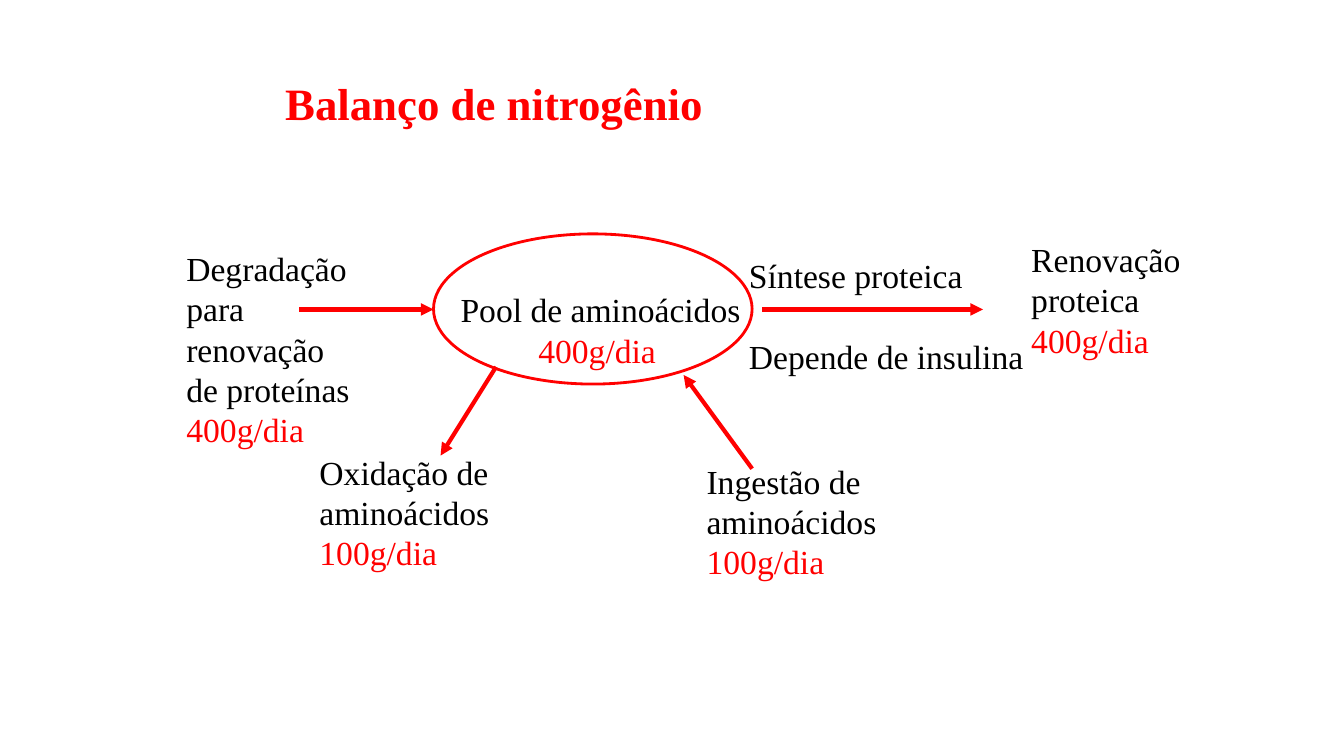
from lxml import etree
from pptx import Presentation
from pptx import util as u
from pptx.dml.color import RGBColor
from pptx.enum import shapes, text
from pptx.oxml.ns import qn

FONT = "Times New Roman"
RED = "FF0000"
BLACK = "000000"
FLOW_Y = 3.07


def set_color(color_format, value):
    color_format.rgb = RGBColor.from_string(value)


def add_label(slide, box, paragraphs, wrap=True, gap=0, **font_format):
    """Add a text box; each paragraph is a list of (wording, colour) runs."""
    shape = slide.shapes.add_textbox(*map(u.Inches, box))
    frame = shape.text_frame
    frame.word_wrap = wrap
    frame.auto_size = text.MSO_AUTO_SIZE.SHAPE_TO_FIT_TEXT
    values = {"name": FONT, "size": u.Pt(24), **font_format}
    for index, runs in enumerate(paragraphs):
        paragraph = frame.add_paragraph() if index else frame.paragraphs[0]
        if index and gap:
            paragraph.space_before = u.Pt(gap)
        for wording, color in runs:
            run = paragraph.add_run()
            run.text = wording
            for name, value in values.items():
                setattr(run.font, name, value)
            set_color(run.font.color, color)


def add_amount(slide, left, top, wording, amount):
    paragraphs = [[(wording, BLACK)], [(amount, RED)]]
    add_label(slide, (left, top, 1.97, 1.31), paragraphs)


def add_arrow(slide, start, end):
    connector = slide.shapes.add_connector(
        shapes.MSO_CONNECTOR.STRAIGHT, *map(u.Inches, (*start, *end)))
    set_color(connector.line.color, RED)
    connector.line.width = u.Pt(3)
    line = connector.line._get_or_add_ln()
    etree.SubElement(line, qn("a:tailEnd"), type="triangle")
    etree.SubElement(connector._element.spPr, qn("a:effectLst"))


def add_pool_outline(slide, box):
    ellipse = slide.shapes.add_shape(
        shapes.MSO_SHAPE.OVAL, *map(u.Inches, box))
    ellipse.shadow.inherit = False
    ellipse.fill.background()
    set_color(ellipse.line.color, RED)
    ellipse.line.width = u.Pt(2)


def main():
    presentation = Presentation()
    presentation.slide_width = u.Inches(13.33)
    presentation.slide_height = u.Inches(7.5)
    slide = presentation.slides.add_slide(presentation.slide_layouts[6])

    add_label(slide, (2.73, 0.7, 4.38, 0.64),
              [[("Balanço de nitrogênio", RED)]],
              wrap=False, size=u.Pt(32), bold=True)

    add_pool_outline(slide, (4.3, 2.32, 3.16, 1.49))
    add_label(slide, (4.47, 2.82, 3, 0.5),
              [[("Pool de aminoácidos", BLACK)]], wrap=False)
    add_label(slide, (5.24, 3.22, 1.38, 0.5),
              [[("400g/dia", RED)]], wrap=False)

    for start, end in (
        ((2.97, FLOW_Y), (4.3, FLOW_Y)),
        ((7.56, FLOW_Y), (9.75, FLOW_Y)),
        ((4.92, 3.64), (4.37, 4.52)),
        ((7.46, 4.65), (6.78, 3.72)),
    ):
        add_arrow(slide, start, end)

    for left, top, wording, amount in (
        (10.13, 2.32, "Renovação proteica", "400g/dia"),
        (3.07, 4.43, "Oxidação de aminoácidos", "100g/dia"),
        (6.91, 4.52, "Ingestão de aminoácidos", "100g/dia"),
    ):
        add_amount(slide, left, top, wording, amount)

    add_label(slide, (7.33, 2.48, 2.95, 1.31),
              [[("Síntese proteica", BLACK)],
               [("Depende de insulina", BLACK)]], wrap=False, gap=29)
    add_label(slide, (1.75, 2.41, 1.97, 2.12),
              [[("Degradação", BLACK)],
               [("para renovação", BLACK)],
               [("de proteínas ", BLACK), ("400g/dia", RED)]])

    presentation.save("out.pptx")


if __name__ == "__main__":
    main()
